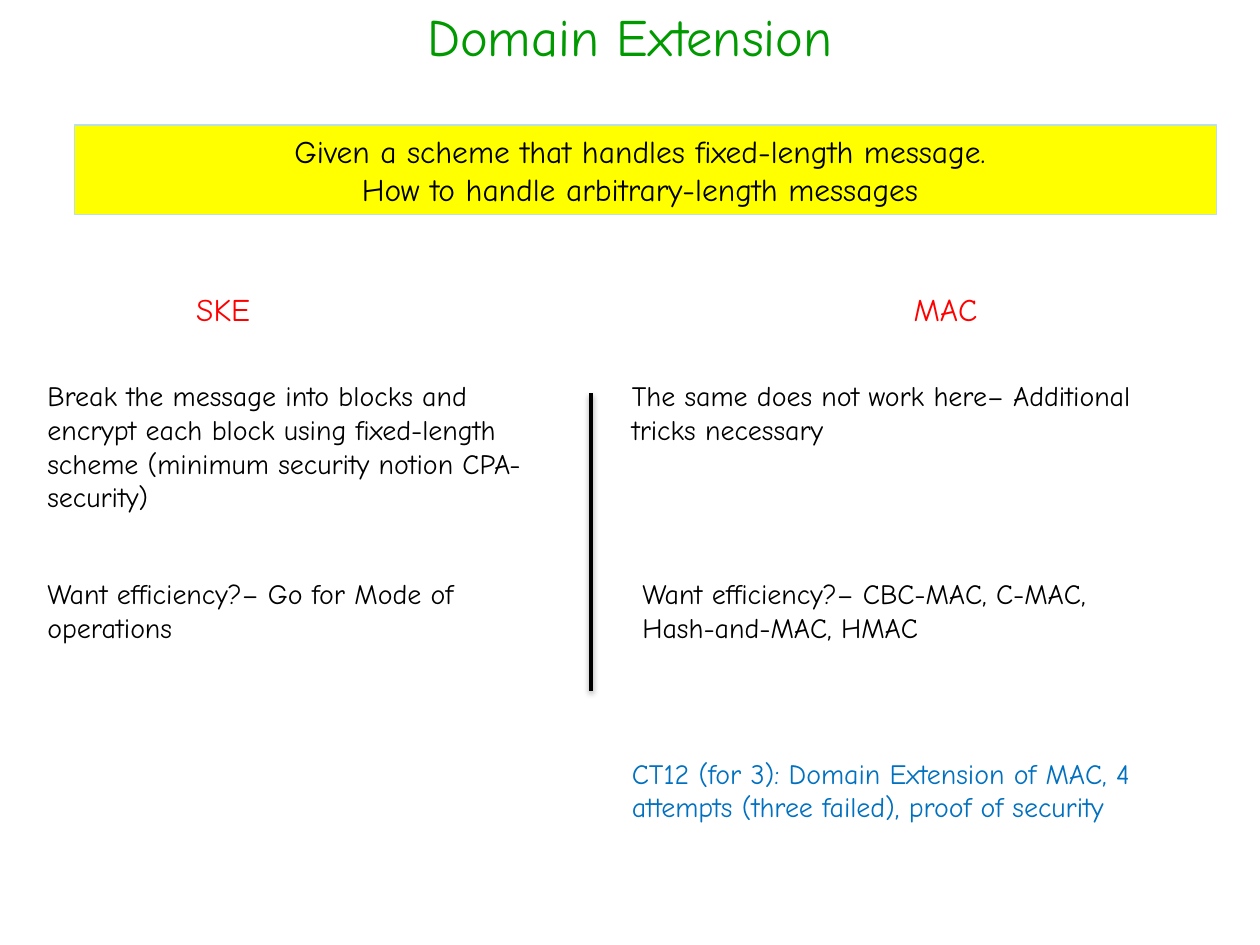
from lxml import etree
from pptx import Presentation
from pptx.dml.color import RGBColor
from pptx.enum import shapes, text
from pptx.util import Pt

INK = {
    "black": "000000",
    "green": "009900",
    "red": "FF0000",
    "blue": "0070C0",
    "yellow": "FFFF00",
    "pale": "BBE0E3",
}
SHADE = """<a:effectLst xmlns:a="http://schemas.openxmlformats.org/drawingml/2006/main">
<a:outerShdw blurRad="40000" dist="20000" dir="5400000" rotWithShape="0">
<a:srgbClr val="000000"><a:alpha val="38000"/></a:srgbClr>
</a:outerShdw></a:effectLst>"""


def tint(name):
    return RGBColor.from_string(INK[name])


def write(frame, lines, font="Comic Neue", size=16, ink="black", center=False, wrap=True, grow=True):
    frame.word_wrap = wrap
    frame.auto_size = text.MSO_AUTO_SIZE.SHAPE_TO_FIT_TEXT if grow else text.MSO_AUTO_SIZE.NONE
    for i, line in enumerate(lines):
        para = frame.paragraphs[0] if i == 0 else frame.add_paragraph()
        para.alignment = text.PP_ALIGN.CENTER if center else text.PP_ALIGN.LEFT
        run = para.add_run()
        run.text = line
        run.font.name = font
        run.font.size = Pt(size)
        run.font.color.rgb = tint(ink)


class Deck:
    def __init__(self, slide, font):
        self.slide = slide
        self.font = font

    def label(self, box, *lines, anchor=text.MSO_ANCHOR.TOP, **style):
        shape = self.slide.shapes.add_textbox(*map(Pt, box))
        shape.text_frame.vertical_anchor = anchor
        write(shape.text_frame, lines, font=self.font, **style)

    def panel(self, box, *lines, fill, edge, **style):
        shape = self.slide.shapes.add_shape(shapes.MSO_SHAPE.RECTANGLE, *map(Pt, box))
        shape.shadow.inherit = False
        shape.fill.solid()
        shape.fill.fore_color.rgb = tint(fill)
        shape.line.color.rgb = tint(edge)
        shape.line.width = Pt(0.75)
        write(shape.text_frame, lines, font=self.font, **style)

    def rule(self, ends, ink, width):
        line = self.slide.shapes.add_connector(shapes.MSO_CONNECTOR.STRAIGHT, *map(Pt, ends))
        line.line.color.rgb = tint(ink)
        line.line.width = Pt(width)
        line._element.spPr.append(etree.fromstring(SHADE))


def main():
    show = Presentation()
    show.slide_width, show.slide_height = Pt(720), Pt(540)
    deck = Deck(show.slides.add_slide(show.slide_layouts[6]), "Comic Neue")

    deck.label((0, -2, 720, 45), "Domain Extension", anchor=text.MSO_ANCHOR.MIDDLE,
               size=30, ink="green", center=True, grow=False)
    deck.rule((337.7, 224.6, 337.7, 394.6), "black", 2)

    for left, wide, head in ((105, 45.5, "SKE"), (515, 52, "MAC")):
        deck.label((left, 162, wide, 29), head, size=18, ink="red", wrap=False)

    deck.panel((42.5, 71.5, 652.5, 51),
               "Given a scheme that handles fixed-length message. ",
               "How to handle arbitrary-length messages ",
               fill="yellow", edge="pale", size=18, center=True)

    first, second, last = 213, 326, 428.5
    notes = (
        (20, first, 300, 85, "black",
         "Break the message into blocks and encrypt each block using fixed-length "
         "scheme (minimum security notion CPA-security)"),
        (354, first, 340, 46, "black", "The same does not work here– Additional tricks necessary"),
        (20, second, 300, 46, "black", "Want efficiency?– Go for Mode of operations"),
        (360, second, 300, 46, "black", "Want efficiency?– CBC-MAC, C-MAC, Hash-and-MAC, HMAC"),
        (354, last, 340, 46, "blue",
         "CT12 (for 3): Domain Extension of MAC, 4 attempts (three failed), proof of security"),
    )
    for *box, ink, words in notes:
        deck.label(box, words, ink=ink)

    show.save("out.pptx")


if __name__ == "__main__":
    main()
